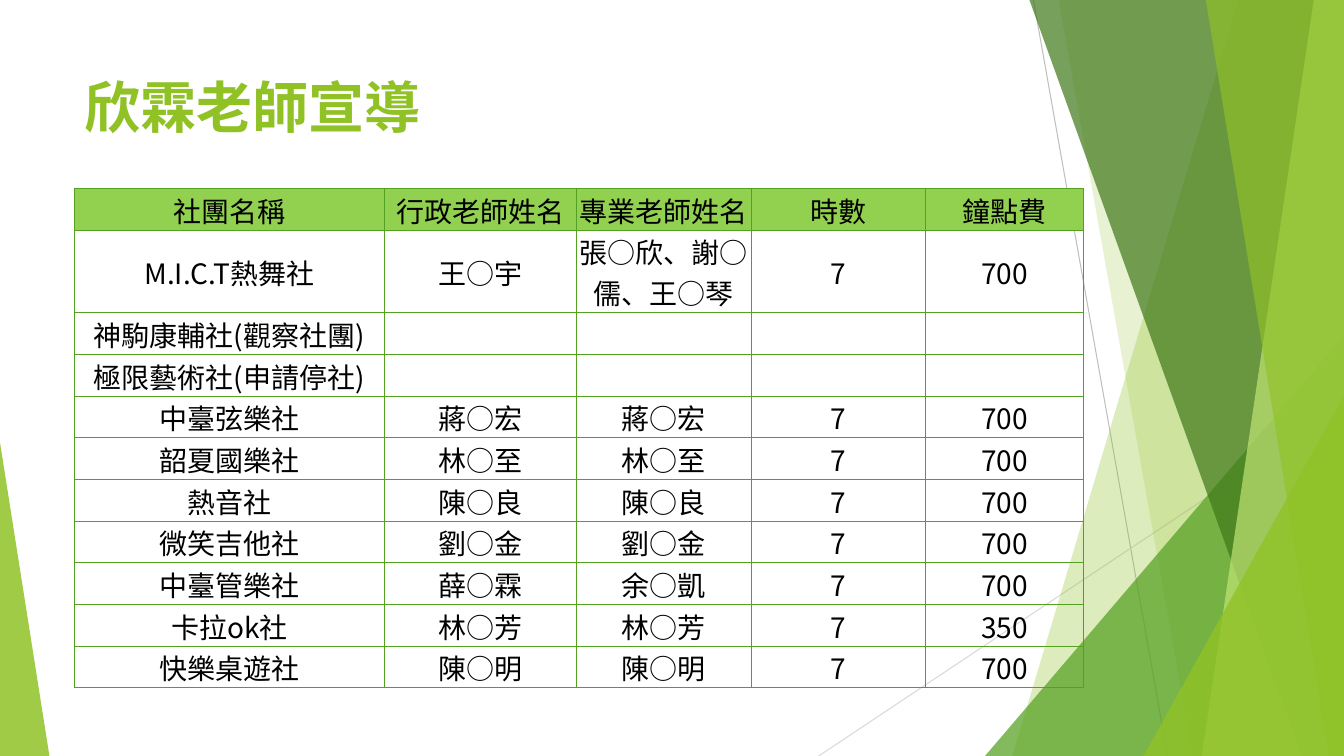
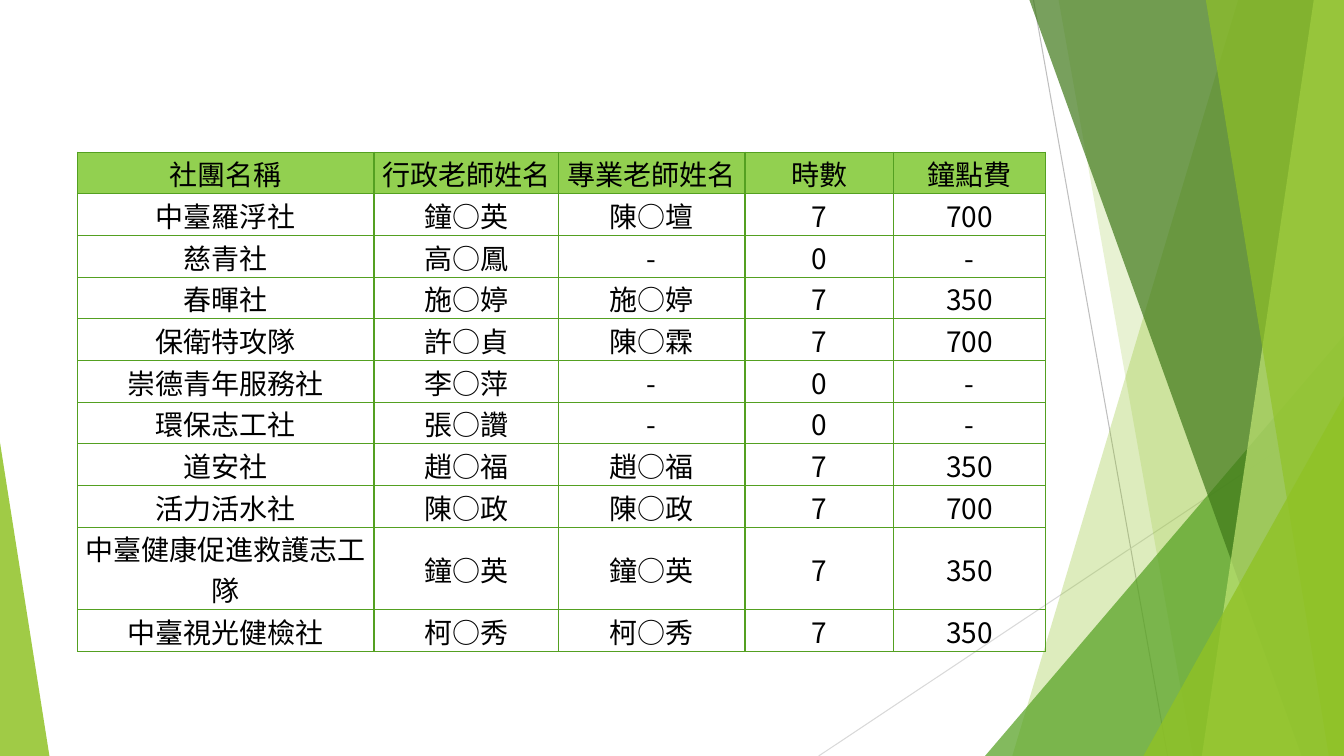
from lxml.etree import SubElement
from pptx import Presentation
from pptx.dml.color import RGBColor
from pptx.enum.shapes import MSO_CONNECTOR, MSO_SHAPE
from pptx.enum.text import MSO_ANCHOR, PP_ALIGN
from pptx.oxml.ns import qn
from pptx.util import Inches, Pt

# Shared look
COLORS = {
    "lime": "90C226",
    "green": "54A021",
    "forest": "3F7819",
    "pale": "C0E474",
    "header": "92D050",
    "text": "000000",
    "steep_line": "BFBFBF",
    "flat_line": "D9D9D9",
}
TITLE_FONT = "Roboto"
TABLE_FONT = "Noto Sans CJK SC"
WIDTH, HEIGHT = 13.33, 7.5
ROW_HEIGHT = 0.41
TITLE_ONLY, BLANK = 5, 6

# Backdrop parts from back to front
LINES = [  # start, end, color
    ((10.25, 0), (11.58, HEIGHT), "steep_line"),
    ((WIDTH, 4.03), (8.12, HEIGHT), "flat_line"),
]
FACETS = [  # wedge: top x, bottom x; triangle: left, top, width, apex
    ("wedge", (12.28, 10.04), "lime", 30),
    ("wedge", (10.5, 11.83), "lime", 20),
    ("triangle", (9.77, 3.33, 3.56, 1), "green", 72),
    ("wedge", (10.21, 12.91), "forest", 70),
    ("wedge", (13.03, 11.92), "pale", 70),
    ("wedge", (11.96, 13.18), "lime", 65),
    ("triangle", (11.34, 3.93, 1.99, 1), "lime", 80),
    ("triangle", (0, 4.39, 0.49, 0), "lime", 85),
]

# Table content
HEADINGS = ("社團名稱", "行政老師姓名", "專業老師姓名", "時數", "鐘點費")
FIRST_CLUBS = [
    ("M.I.C.T熱舞社", "王○宇", "張○欣、謝○儒、王○琴", "7", "700"),
    ("神駒康輔社(觀察社團)", "", "", "", ""),
    ("極限藝術社(申請停社)", "", "", "", ""),
    ("中臺弦樂社", "蔣○宏", "蔣○宏", "7", "700"),
    ("韶夏國樂社", "林○至", "林○至", "7", "700"),
    ("熱音社", "陳○良", "陳○良", "7", "700"),
    ("微笑吉他社", "劉○金", "劉○金", "7", "700"),
    ("中臺管樂社", "薛○霖", "余○凱", "7", "700"),
    ("卡拉ok社", "林○芳", "林○芳", "7", "350"),
    ("快樂桌遊社", "陳○明", "陳○明", "7", "700"),
]
SECOND_CLUBS = [
    ("中臺羅浮社", "鐘○英", "陳○壇", "7", "700"),
    ("慈青社", "高○鳳", "-", "0", "-"),
    ("春暉社", "施○婷", "施○婷", "7", "350"),
    ("保衛特攻隊", "許○貞", "陳○霖", "7", "700"),
    ("崇德青年服務社", "李○萍", "-", "0", "-"),
    ("環保志工社", "張○讚", "-", "0", "-"),
    ("道安社", "趙○福", "趙○福", "7", "350"),
    ("活力活水社", "陳○政", "陳○政", "7", "700"),
    ("中臺健康促進救護志工隊", "鐘○英", "鐘○英", "7", "350"),
    ("中臺視光健檢社", "柯○秀", "柯○秀", "7", "350"),
]


def color(name):
    return RGBColor.from_string(COLORS[name])


def write_text(frame, text, font, size, color_name, bold=False, align=PP_ALIGN.LEFT):
    para = frame.paragraphs[0]
    para.alignment = align
    if not text:
        return
    span = para.add_run()
    span.text = text
    span.font.name = font
    span.font.size = Pt(size)
    span.font.bold = bold
    span.font.color.rgb = color(color_name)
    SubElement(span.font._element, qn("a:ea"), typeface=font)


def paint(shape, color_name, opacity):
    shape.shadow.inherit = False
    shape.line.fill.background()
    shape.fill.solid()
    shape.fill.fore_color.rgb = color(color_name)
    tint = shape.element.spPr.find(qn("a:solidFill")).find(qn("a:srgbClr"))
    SubElement(tint, qn("a:alpha"), val=str(opacity * 1000))


def add_wedge(shapes, top_x, bottom_x):
    """Outline that reaches from a slanted left edge to the right slide edge."""
    outline = shapes.build_freeform(Inches(top_x), 0)
    corners = [(WIDTH, 0), (WIDTH, HEIGHT), (bottom_x, HEIGHT)]
    outline.add_line_segments([(Inches(x), Inches(y)) for x, y in corners])
    return outline.convert_to_shape()


def add_triangle(shapes, left, top, width, apex):
    """Triangle that stands on the bottom slide edge."""
    shape = shapes.add_shape(
        MSO_SHAPE.ISOSCELES_TRIANGLE,
        Inches(left), Inches(top), Inches(width), Inches(HEIGHT - top),
    )
    shape.adjustments[0] = apex
    return shape


def add_backdrop(slide):
    shapes = slide.shapes.add_group_shape().shapes
    for start, end, color_name in LINES:
        line = shapes.add_connector(
            MSO_CONNECTOR.STRAIGHT, *(Inches(value) for value in start + end)
        )
        line.line.color.rgb = color(color_name)
        line.line.width = Pt(0.75)
        SubElement(line.element.spPr, qn("a:effectLst"))
    builders = {"wedge": add_wedge, "triangle": add_triangle}
    for kind, geometry, color_name, opacity in FACETS:
        paint(builders[kind](shapes, *geometry), color_name, opacity)


def add_title(slide, text, left, top, width, height):
    title = slide.shapes.title
    title.left, title.top = Inches(left), Inches(top)
    title.width, title.height = Inches(width), Inches(height)
    title.text_frame.vertical_anchor = MSO_ANCHOR.TOP
    write_text(title.text_frame, text, TITLE_FONT, 40, "lime", bold=True)


def add_borders(cell):
    properties = cell._tc.get_or_add_tcPr()
    for side in ("lnL", "lnR", "lnT", "lnB"):
        border = SubElement(properties, qn(f"a:{side}"), w=str(Pt(1)))
        fill = SubElement(border, qn("a:solidFill"))
        SubElement(fill, qn("a:srgbClr"), val=COLORS["green"])


def format_cell(cell, text, is_header):
    cell.margin_left = cell.margin_right = cell.margin_top = Inches(0.01)
    cell.margin_bottom = 0
    cell.vertical_anchor = MSO_ANCHOR.MIDDLE
    add_borders(cell)
    if is_header:
        cell.fill.solid()
        cell.fill.fore_color.rgb = color("header")
    else:
        cell.fill.background()
    write_text(cell.text_frame, text, TABLE_FONT, 20, "text", align=PP_ALIGN.CENTER)


def add_club_table(slide, clubs, left, top, column_widths, tall_row):
    rows = [HEADINGS] + clubs
    table = slide.shapes.add_table(
        len(rows), len(HEADINGS), Inches(left), Inches(top),
        Inches(sum(column_widths)), Inches(ROW_HEIGHT * (len(rows) + 1)),
    ).table
    table.first_row = table.horz_banding = False
    for column, width in zip(table.columns, column_widths):
        column.width = Inches(width)
    for row_index, values in enumerate(rows):
        lines = 2 if row_index == tall_row else 1
        table.rows[row_index].height = Inches(ROW_HEIGHT * lines)
        for column_index, text in enumerate(values):
            format_cell(table.cell(row_index, column_index), text, row_index == 0)


def add_club_slide(deck, clubs, left, top, column_widths, tall_row, title=None):
    layout = deck.slide_layouts[TITLE_ONLY if title else BLANK]
    slide = deck.slides.add_slide(layout)
    add_backdrop(slide)
    if title:
        add_title(slide, title, left, 0.67, 9.4, 1.44)
    add_club_table(slide, clubs, left, top, column_widths, tall_row)


def main():
    deck = Presentation()
    deck.slide_width, deck.slide_height = Inches(WIDTH), Inches(HEIGHT)
    add_club_slide(
        deck, FIRST_CLUBS, 0.74, 1.87, (3.07, 1.91, 1.73, 1.73, 1.57),
        tall_row=1, title="欣霖老師宣導",
    )
    add_club_slide(
        deck, SECOND_CLUBS, 0.77, 1.51, (2.94, 1.83, 1.85, 1.47, 1.51), tall_row=9,
    )
    deck.save("out.pptx")


if __name__ == "__main__":
    main()
